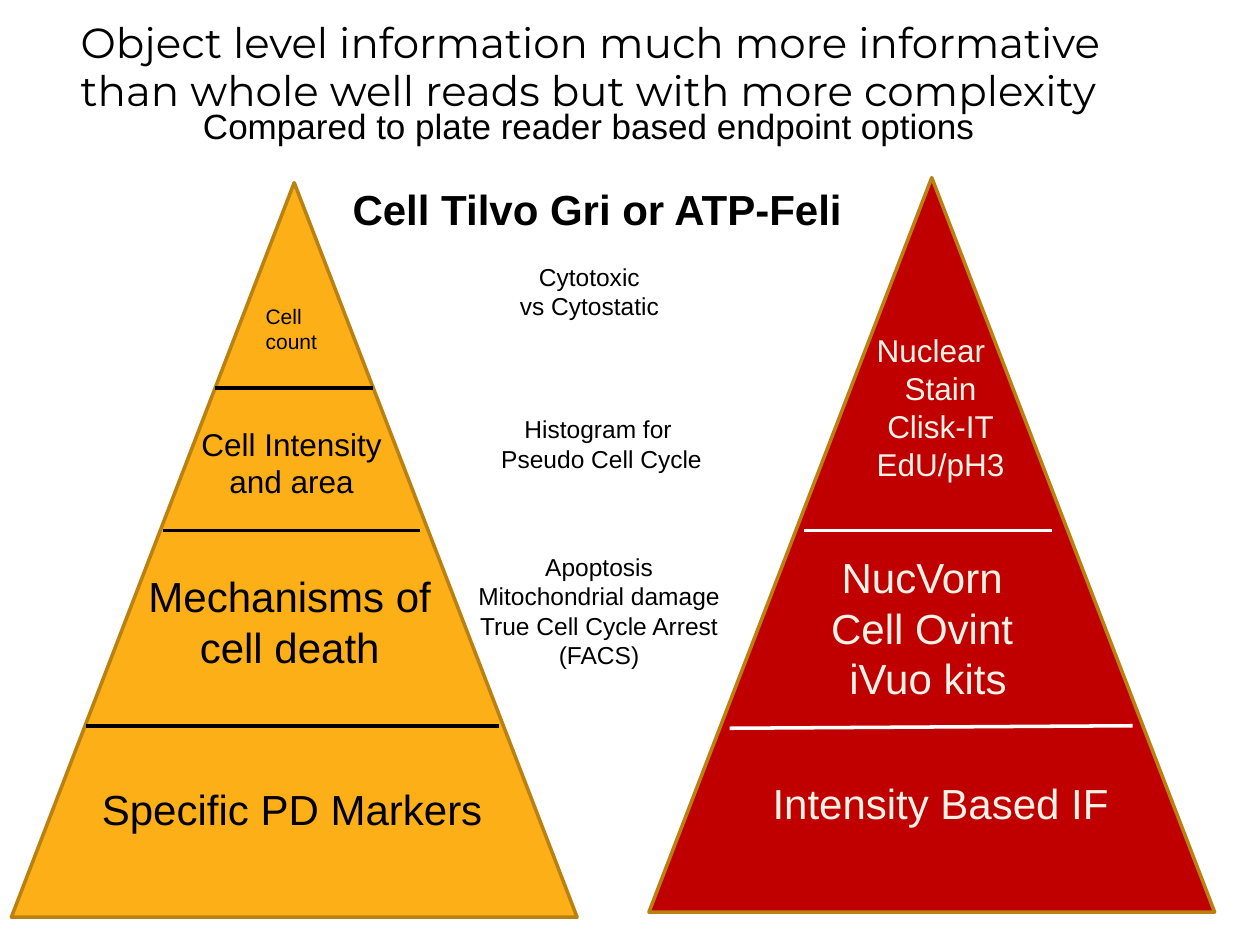
from lxml import etree
from pptx import Presentation
from pptx import util as u
from pptx.dml.color import RGBColor
from pptx.enum import shapes, text
from pptx.oxml.ns import qn

COLORS = {
    "black": "000000",
    "white": "FFFFFF",
    "cream": "F9F3E7",
    "amber": "FCAF17",
    "red": "C00000",
    "outline": "BA8111",
}
LEFT, CENTER = text.PP_ALIGN.LEFT, text.PP_ALIGN.CENTER


class SlideBuilder:
    """Holds the style and the current slide."""

    body_font = "Arial"
    title_font = "Montserrat"
    line_width = u.Pt(2)

    def __init__(self, slide):
        self.slide = slide

    def color(self, name):
        return RGBColor.from_string(COLORS[name])

    def place(self, shape, box):
        shape.left, shape.top, shape.width, shape.height = map(u.Inches, box)

    def style(self, paragraph, size, color, font, bold=False):
        for run in paragraph.runs:
            run.font.size = u.Pt(size)
            run.font.name = font
            run.font.bold = bold
            run.font.color.rgb = self.color(color)

    def placeholder(self, shape, box, content, size, font, align):
        self.place(shape, box)
        frame = shape.text_frame
        frame.text = content
        frame.auto_size = text.MSO_AUTO_SIZE.NONE
        frame.vertical_anchor = text.MSO_ANCHOR.MIDDLE
        paragraph = frame.paragraphs[0]
        paragraph.alignment = align
        paragraph.line_spacing = 0.95
        paragraph.space_before = u.Pt(0)
        self.style(paragraph, size, "black", font)
        return paragraph

    def title(self, box, content):
        self.placeholder(self.slide.shapes.title, box, content, 24,
                         self.title_font, LEFT)

    def subtitle(self, box, content):
        paragraph = self.placeholder(self.slide.placeholders[1], box, content,
                                     20, self.body_font, CENTER)
        paragraph.level = 1
        properties = paragraph._p.get_or_add_pPr()
        properties.set("marL", str(u.Inches(0.26)))
        properties.set("indent", "0")
        etree.SubElement(properties, qn("a:buNone"))

    def pyramid(self, left, top, fill):
        shape = self.slide.shapes.add_shape(
            shapes.MSO_SHAPE.ISOSCELES_TRIANGLE,
            u.Inches(left), u.Inches(top), u.Inches(4.49), u.Inches(5.83))
        shape.shadow.inherit = False
        shape.fill.solid()
        shape.fill.fore_color.rgb = self.color(fill)
        shape.line.color.rgb = self.color("outline")
        shape.line.width = self.line_width

    def divider(self, start, end, color):
        connector = self.slide.shapes.add_connector(
            shapes.MSO_CONNECTOR.STRAIGHT, *map(u.Inches, start + end))
        connector.line.color.rgb = self.color(color)
        connector.line.width = self.line_width
        etree.SubElement(connector._element.spPr, qn("a:effectLst"))

    def label(self, box, lines, size, color="black", first=CENTER,
              wrap=False, bold=False):
        shape = self.slide.shapes.add_textbox(*map(u.Inches, box))
        frame = shape.text_frame
        frame.word_wrap = wrap
        frame.text = "\n".join(lines)
        for index, paragraph in enumerate(frame.paragraphs):
            paragraph.alignment = CENTER if index else first
            self.style(paragraph, size, color, self.body_font, bold)


def main():
    presentation = Presentation()
    presentation.slide_width = u.Inches(10)
    presentation.slide_height = u.Inches(7.5)
    slide = presentation.slides.add_slide(presentation.slide_layouts[1])
    builder = SlideBuilder(slide)

    # Headings
    builder.subtitle((0, 0.81, 9.09, 0.4),
                     "Compared to plate reader based endpoint options")
    builder.title((0.54, 0.1, 9.1, 0.88),
                  "Object level information much more informative\v"
                  "than whole well reads but with more complexity")

    # Left pyramid: what is measured
    builder.pyramid(0.09, 1.45, "amber")
    for left, right, y in ((1.71, 2.96, 3.08), (1.29, 3.33, 4.21),
                           (0.68, 3.96, 5.76)):
        builder.divider((left, y), (right, y), "black")
    for box, lines, size in (
        ((2.01, 2.36, 0.61, 0.5), ["Cell", "count"], 12),
        ((1.5, 3.32, 1.72, 0.71), ["Cell Intensity", "and area"], 18),
        ((1.08, 4.48, 2.56, 0.91), ["Mechanisms of", "cell death"], 24),
        ((0.71, 6.17, 3.25, 0.91), ["Specific PD Markers"], 24),
    ):
        builder.label(box, lines, size, first=LEFT)

    # Middle column: what each level tells
    for box, lines in (
        ((3.59, 2.03, 2.23, 0.57), ["Cytotoxic ", "vs Cytostatic "]),
        ((3.66, 3.24, 2.23, 0.57), ["Histogram for ", "Pseudo Cell Cycle"]),
        ((3.64, 4.33, 2.23, 1.04), ["Apoptosis", "Mitochondrial damage",
                                    "True Cell Cycle Arrest (FACS)"]),
    ):
        builder.label(box, lines, 14, wrap=True)

    # Right pyramid: reagents
    builder.pyramid(5.15, 1.41, "red")
    builder.divider((6.38, 4.21), (8.35, 4.21), "white")
    builder.divider((5.79, 5.78), (8.99, 5.76), "white")
    for box, lines, size, first in (
        ((6.86, 2.58, 1.23, 1.31),
         ["Nuclear", "Stain", "Clisk-IT", "EdU/pH3"], 18, LEFT),
        ((6.45, 4.33, 1.83, 1.31),
         ["NucVorn ", "Cell Ovint ", "iVuo kits"], 24, CENTER),
        ((6.02, 6.12, 2.89, 0.5), ["Intensity Based IF"], 24, CENTER),
    ):
        builder.label(box, lines, size, "cream", first)

    # Assay heading between the pyramids
    builder.label((2.7, 1.41, 4.16, 0.5), ["Cell Tilvo Gri or ATP-Feli"], 24,
                  first=LEFT, bold=True)

    presentation.save("out.pptx")


if __name__ == "__main__":
    main()
